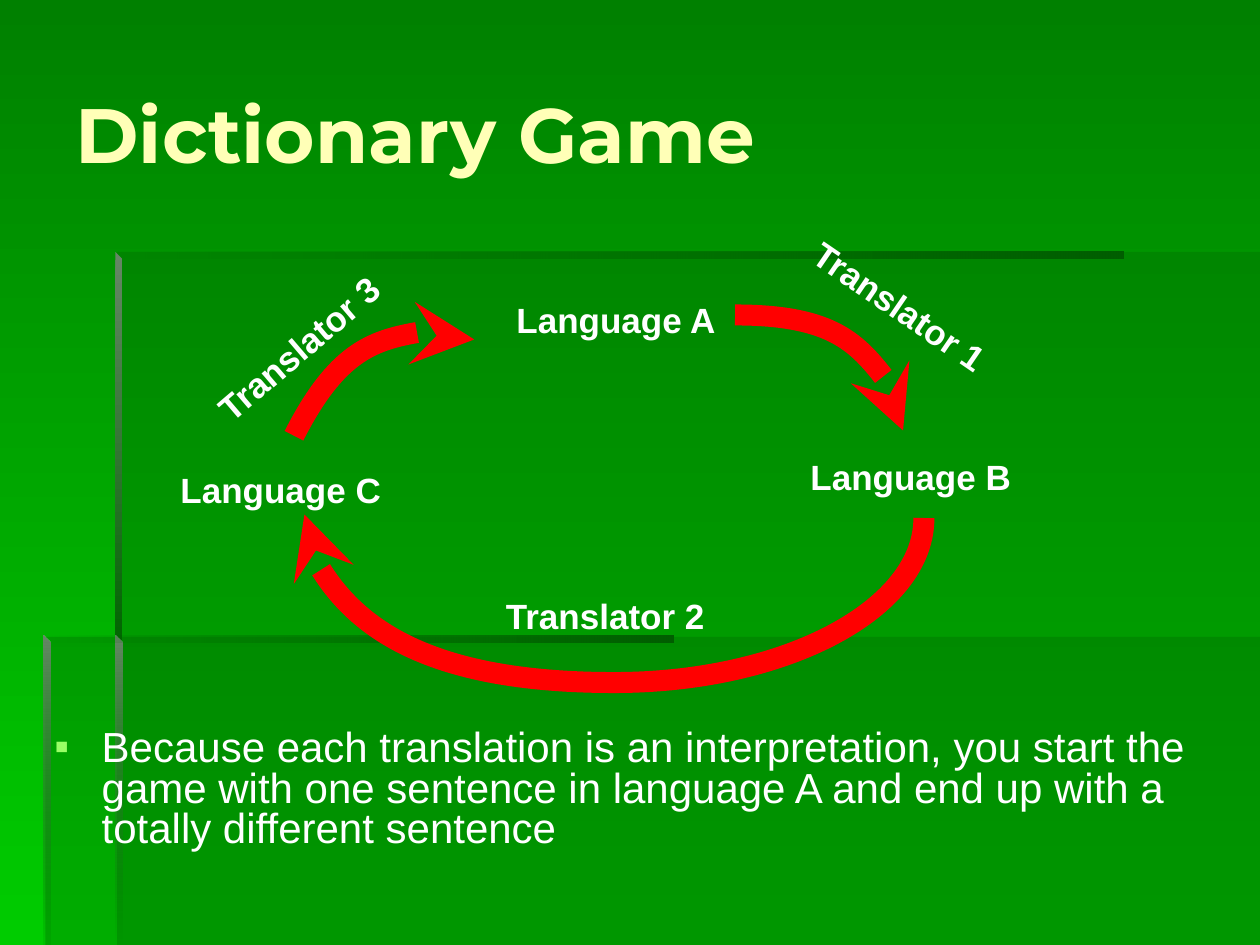
from pptx import Presentation
from pptx.dml.color import RGBColor
from pptx.enum.text import MSO_ANCHOR
from pptx.oxml.ns import qn
from pptx.util import Pt
from lxml.etree import SubElement

WHITE = RGBColor(0xFF, 0xFF, 0xFF)
CREAM = RGBColor(0xFF, 0xFF, 0xB7)
RED = RGBColor(0xFF, 0x00, 0x00)
LIME = RGBColor(0x99, 0xFF, 0x66)
TOP_GREEN = RGBColor(0x00, 0x80, 0x00)
BOTTOM_GREEN = RGBColor(0x00, 0xCC, 0x00)
PANEL_GREEN = RGBColor(0x00, 0x66, 0x00)
EDGE_GREEN = RGBColor(0x00, 0x5E, 0x00)
EDGE_GRAY = RGBColor(0x66, 0x86, 0x66)

SLIDE_WIDTH, SLIDE_HEIGHT = 720, 540
BAR = 4
DOWN, RIGHT = 270, 0

# Label text, left and top within the cycle, rotation
LABELS = [
    ("Language A", 192, 7, 0),
    ("Translator 1", 354, 0.5, 34.4),
    ("Language B", 360, 97, 0),
    ("Translator 2", 186, 176, 0),
    ("Language C", 0, 104, 0),
    ("Translator 3", 10, 22, 319.4),
]
# Bezier control points within the cycle: a start, then three per curve
ARROWS = [
    [(324, 20), (377, 20), (420, 50), (420, 86)],
    [(432, 136), (432, 188), (353, 230), (255, 230),
     (157, 230), (78, 188), (78, 134)],
    [(72, 89), (96, 42), (142, 18), (175, 34)],
]


def set_opacity(color_element, percent):
    SubElement(color_element, qn("a:alpha"), val=str(percent * 1000))


def fill_gradient(fill, colors, angle):
    fill.gradient()
    fill.gradient_angle = angle
    for stop, color in zip(fill.gradient_stops, colors):
        stop.color.rgb = color


def add_outline(slide, points, close=True):
    start, *others = [(Pt(x), Pt(y)) for x, y in points]
    builder = slide.shapes.build_freeform(*start)
    builder.add_line_segments(others, close=close)
    shape = builder.convert_to_shape()
    shape.shadow.inherit = False
    return shape


def add_panel(slide, points):
    panel = add_outline(slide, points)
    panel.fill.solid()
    panel.fill.fore_color.rgb = PANEL_GREEN
    panel.line.fill.background()
    set_opacity(next(panel._element.spPr.iter(qn("a:srgbClr"))), 30)


def add_bar(slide, points, colors, angle, opacities):
    bar = add_outline(slide, points)
    fill_gradient(bar.fill, colors, angle)
    bar.line.fill.background()
    for element, percent in zip(bar._element.spPr.iter(qn("a:srgbClr")), opacities):
        set_opacity(element, percent)


def add_horizontal_bar(slide, left, top, width):
    right, bottom = left + width, top + BAR
    points = [(left, top), (left, bottom), (right, bottom), (right, top)]
    add_bar(slide, points, (PANEL_GREEN, EDGE_GREEN), RIGHT, (0, 100))


def add_vertical_bar(slide, left, top, height, end_opacity):
    """Add a bar whose upper end is cut at a slant."""
    right, bottom = left + BAR, top + height
    points = [(left, top), (left, bottom), (right, bottom), (right, top + BAR)]
    add_bar(slide, points, (EDGE_GRAY, PANEL_GREEN), DOWN, (100, end_opacity))


def add_backdrop(slide, width, height):
    fill_gradient(slide.background.fill, (TOP_GREEN, BOTTOM_GREEN), DOWN)
    outer, inner, upper, lower = 26, 67, 144, 364
    add_panel(slide, [(inner, lower), (inner, height), (width, height), (width, lower)])
    add_panel(slide, [(inner, lower), (outer, lower), (outer, height),
                      (width, height), (width, upper), (inner, upper)])
    add_horizontal_bar(slide, inner - 1, upper, 576)
    add_vertical_bar(slide, inner - 1, upper, lower + 3 - upper, 100)
    add_vertical_bar(slide, inner - 1, lower - 1, height - lower + 1, 0)
    add_horizontal_bar(slide, outer - 1, lower - 1, 360)
    add_vertical_bar(slide, outer - 1, lower - 1, height - lower + 1, 10)


def add_text(slide, box, text, size, color=WHITE, font="Arial", bold=False):
    text_box = slide.shapes.add_textbox(*map(Pt, box))
    text_box.text_frame.word_wrap = True
    paragraph = text_box.text_frame.paragraphs[0]
    paragraph.text = text
    paragraph.font.size = Pt(size)
    paragraph.font.name = font
    paragraph.font.bold = bold
    paragraph.font.color.rgb = color
    return text_box


def add_title(slide, box):
    title = add_text(slide, box, "Dictionary Game", 44, CREAM, "Montserrat", True)
    title.text_frame.vertical_anchor = MSO_ANCHOR.MIDDLE


def add_bullet(slide, box):
    body = add_text(
        slide, box,
        "Because each translation is an interpretation, you start the game with one "
        "sentence in language A and end up with a totally different sentence", 24)
    paragraph = body.text_frame.paragraphs[0]
    paragraph.line_spacing = 0.8
    properties = paragraph._p.get_or_add_pPr()
    properties.set("marL", str(Pt(27)))
    properties.set("indent", str(-Pt(27)))
    bullet_color = SubElement(properties, qn("a:buClr"))
    SubElement(bullet_color, qn("a:srgbClr"), val=str(LIME))
    SubElement(properties, qn("a:buFont"), typeface="Arial")
    SubElement(properties, qn("a:buChar"), char="▪")
    # Schema order puts the default run properties after the bullet
    for defaults in properties.findall(qn("a:defRPr")):
        properties.append(defaults)


def add_curved_arrow(slide, points):
    arrow = add_outline(slide, points, close=False)
    arrow.fill.background()
    arrow.line.color.rgb = RED
    arrow.line.width = Pt(12)
    SubElement(arrow.line._get_or_add_ln(), qn("a:tailEnd"), type="stealth")
    # Merge each three straight segments into one Bezier curve
    outline = next(arrow._element.spPr.iter(qn("a:path")))
    segments = outline.findall(qn("a:lnTo"))
    for first in range(0, len(segments), 3):
        curve = SubElement(outline, qn("a:cubicBezTo"))
        for segment in segments[first:first + 3]:
            curve.append(segment[0])
            outline.remove(segment)


def add_cycle(slide, left, top):
    for points in ARROWS:
        add_curved_arrow(slide, [(left + x, top + y) for x, y in points])
    for text, x, y, rotation in LABELS:
        label = add_text(slide, (left + x, top + y, 132, 31), text, 20, bold=True)
        label.rotation = rotation


def main():
    presentation = Presentation()
    presentation.slide_width = Pt(SLIDE_WIDTH)
    presentation.slide_height = Pt(SLIDE_HEIGHT)
    slide = presentation.slides.add_slide(presentation.slide_layouts[6])
    add_backdrop(slide, SLIDE_WIDTH, SLIDE_HEIGHT)
    add_title(slide, (36, 19.5, 660, 113))
    add_bullet(slide, (24, 414, 696, 84))
    add_cycle(slide, 96, 160)
    presentation.save("out.pptx")


if __name__ == "__main__":
    main()
